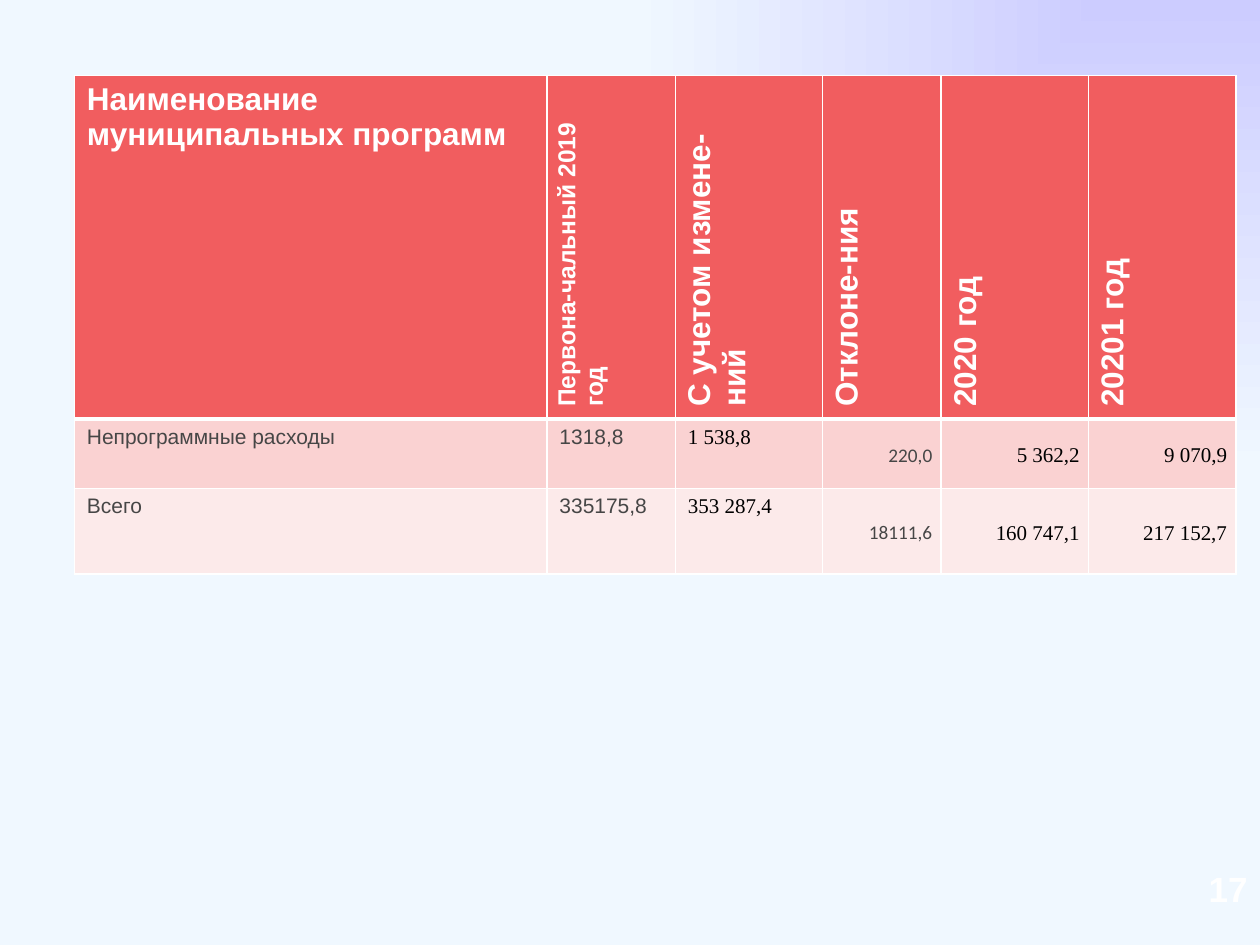
from pptx import Presentation
from pptx.dml.color import RGBColor
from pptx.enum.text import MSO_ANCHOR, PP_ALIGN
from pptx.oxml.ns import qn
from pptx.util import Inches, Pt
from lxml.etree import SubElement


def style(para, font, size, color, bold=False):
    for run in para.runs:
        run.font.name = font
        run.font.size = Pt(size)
        run.font.bold = bold
        run.font.color.rgb = RGBColor.from_string(color)


def edge(cell, side, width):
    """Draw one white border: side is L, R, T or B, width is in points."""
    line = SubElement(cell._tc.get_or_add_tcPr(), qn("a:ln" + side), w=str(Pt(width)))
    fill = SubElement(line, qn("a:solidFill"))
    SubElement(fill, qn("a:srgbClr"), val="FFFFFF")


ROWS = [
    ["Наименование муниципальных программ", "Первона-чальный 2019 год",
     "С учетом измене-ний", "Отклоне-ния", "2020 год", "20201 год"],
    ["Непрограммные расходы", "1318,8", "1 538,8", "220,0", "5 362,2", "9 070,9"],
    ["Всего", "335175,8", "353 287,4", "18111,6", "160 747,1", "217 152,7"],
]
WIDTHS = [3.75, 1.02, 1.17, 0.94, 1.17, 1.17]
HEIGHTS = [2.03, 0.55, 0.68]
FILLS = ["F15D5F", "FAD2D2", "FCEAEA"]
GREY, BLACK, WHITE = "464646", "000000", "FFFFFF"
SERIF = ("Times New Roman", 12, BLACK)
FONTS = [("Arial", 12, GREY), ("Arial", 12, GREY), SERIF,
         ("Calibri", 11, GREY), SERIF, SERIF]

prs = Presentation()
prs.slide_width, prs.slide_height = Inches(10), Inches(7.5)
slide = prs.slides.add_slide(prs.slide_layouts[6])

# Background glow from the top right corner
back = slide.background.fill
back.gradient()
for stop, place, color in zip(back.gradient_stops, (0, 1), ("CCCCFF", "F0F8FF")):
    stop.position = place
    stop.color.rgb = RGBColor.from_string(color)
grad = slide.element.find(".//" + qn("a:gradFill"))
grad.remove(grad.find(qn("a:lin")))
glow = SubElement(grad, qn("a:path"), path="rect")
SubElement(glow, qn("a:fillToRect"), l="100000", b="100000")

# Budget table
table = slide.shapes.add_table(
    len(ROWS), len(WIDTHS), Inches(0.59), Inches(0.6),
    Inches(sum(WIDTHS)), Inches(sum(HEIGHTS))).table
table.horz_banding = False
for col, width in zip(table.columns, WIDTHS):
    col.width = Inches(width)
for row, height in zip(table.rows, HEIGHTS):
    row.height = Inches(height)

for r, texts in enumerate(ROWS):
    for c, text in enumerate(texts):
        cell = table.cell(r, c)
        cell.text_frame.text = text
        para = cell.text_frame.paragraphs[0]
        for side in "LRTB":
            thick = (r, side) in [(0, "B"), (1, "T")]
            edge(cell, side, 3 if thick else 1)
        cell.fill.solid()
        cell.fill.fore_color.rgb = RGBColor.from_string(FILLS[r])
        if r == 0:
            style(para, "Arial", 14 if c == 1 else 18, WHITE, True)
            if c > 0:
                cell._tc.get_or_add_tcPr().set("vert", "vert270")
            continue
        style(para, *FONTS[c])
        if c > 2:
            cell.vertical_anchor = MSO_ANCHOR.MIDDLE
            cell.margin_left = cell.margin_right = Inches(0.07)
            cell.margin_top = cell.margin_bottom = 0
            para.alignment = PP_ALIGN.RIGHT
            para.line_spacing = 1.15

# Page number
box = slide.shapes.add_textbox(Inches(9), Inches(6.8), Inches(1), Inches(0.5))
frame = box.text_frame
frame.word_wrap = True
frame.vertical_anchor = MSO_ANCHOR.MIDDLE
frame.text = "17"
frame.paragraphs[0].alignment = PP_ALIGN.RIGHT
style(frame.paragraphs[0], "Arial", 20, WHITE, True)

prs.save("out.pptx")
